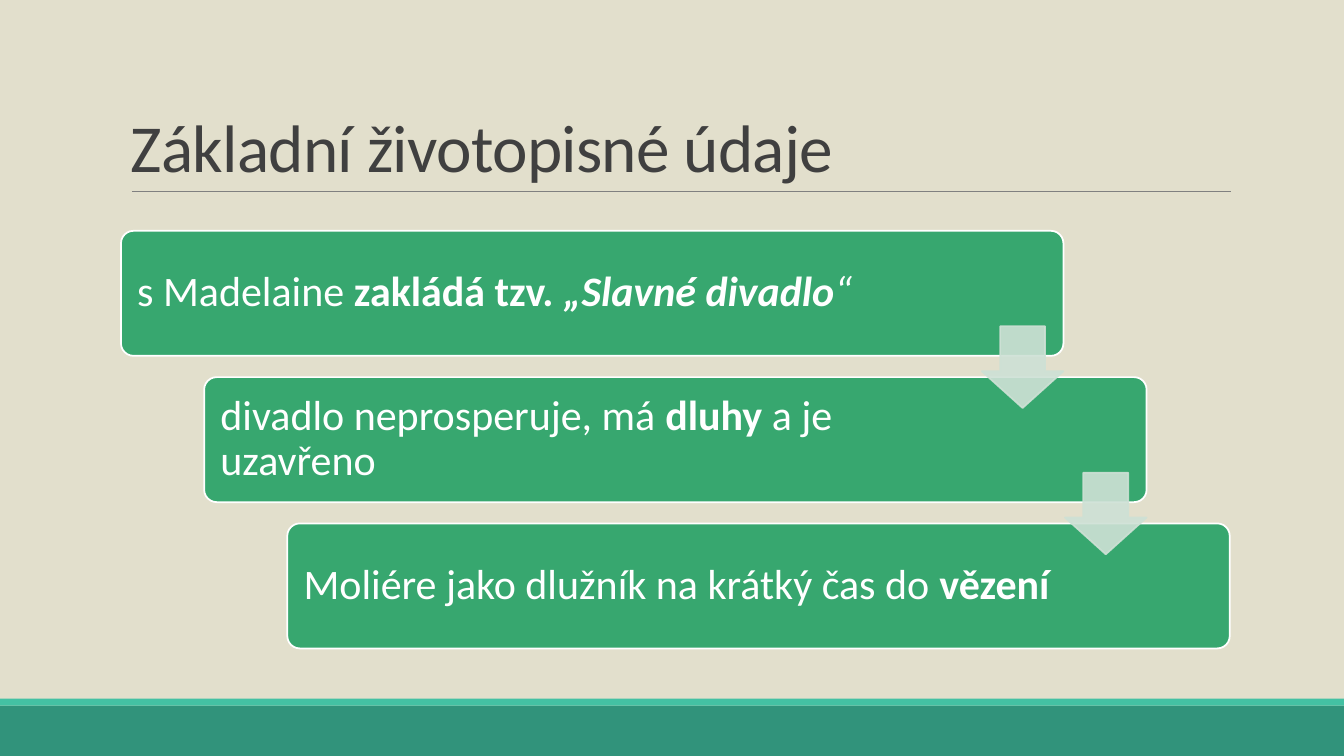
from dataclasses import dataclass

from lxml import etree
from pptx import Presentation
from pptx.dml.color import RGBColor
from pptx.enum.shapes import MSO_CONNECTOR, MSO_SHAPE
from pptx.enum.text import MSO_ANCHOR, PP_ALIGN
from pptx.oxml.ns import qn
from pptx.util import Pt

RECT = MSO_SHAPE.RECTANGLE
ROUND = MSO_SHAPE.ROUNDED_RECTANGLE
DOWN = MSO_SHAPE.DOWN_ARROW
LINE = MSO_CONNECTOR.STRAIGHT
LEFT = PP_ALIGN.LEFT
MIDDLE, BOTTOM = MSO_ANCHOR.MIDDLE, MSO_ANCHOR.BOTTOM


@dataclass(frozen=True)
class Theme:
    font: str = "Calibri"
    back: str = "E2DFCC"
    band: str = "31937B"
    strip: str = "44C1A3"
    rule: str = "808080"
    title: str = "404040"
    card: str = "37A76F"
    arrow: str = "CEE1D5"
    white: str = "FFFFFF"
    head: int = 48
    body: int = 30
    edge: float = 1.25


THEME = Theme()
WIDE, HIGH = 960, 540

# Each step is a list of (text, bold, italic)
STEPS = [
    [("s Madelaine ", False, False), ("zakládá tzv. ", True, False),
     ("„Slavné divadlo", True, True), ("“", False, True)],
    [("divadlo neprosperuje, má ", False, False), ("dluhy", True, False),
     (" a je uzavřeno", False, False)],
    [("Moliére jako dlužník na krátký čas do ", False, False),
     ("vězení", True, False)],
]

# Staircase of cards, in points
CARD_X, CARD_Y = 86.4, 164.9
CARD_W, CARD_H = 673.2, 89.3
STEP_X, STEP_Y = 59.4, 104.5
ARROW, DROP = 58.3, 68.2


def rgb(code):
    return RGBColor.from_string(code)


def shape(slide, kind, x, y, w, h, fill, line=None):
    item = slide.shapes.add_shape(kind, Pt(x), Pt(y), Pt(w), Pt(h))
    item.shadow.inherit = False
    item.fill.solid()
    item.fill.fore_color.rgb = rgb(fill)
    if line:
        item.line.color.rgb = rgb(line)
        item.line.width = Pt(THEME.edge)
    else:
        item.line.fill.background()
    return item


def style(run, size, color, bold=False, italic=False):
    font = run.font
    font.name, font.size = THEME.font, Pt(size)
    font.color.rgb = rgb(color)
    font.bold, font.italic = bold, italic


def title(slide, text):
    box = slide.shapes.add_textbox(Pt(86.4), Pt(22.3), Pt(792), Pt(114.5))
    frame = box.text_frame
    frame.word_wrap = True
    frame.vertical_anchor = BOTTOM
    frame.text = text
    para = frame.paragraphs[0]
    para.line_spacing = 0.85
    run = para.runs[0]
    style(run, THEME.head, THEME.title)
    run.font._element.set("spc", "-50")


def rule(slide, x1, x2, y):
    line = slide.shapes.add_connector(LINE, Pt(x1), Pt(y), Pt(x2), Pt(y))
    line.line.color.rgb = rgb(THEME.rule)
    line.line.width = Pt(0.5)
    etree.SubElement(line._element.spPr, qn("a:effectLst"))


def card(slide, x, y, parts):
    item = shape(slide, ROUND, x, y, CARD_W, CARD_H, THEME.card, THEME.white)
    item.adjustments[0] = 0.1
    frame = item.text_frame
    frame.word_wrap = True
    frame.vertical_anchor = MIDDLE
    frame.margin_left = frame.margin_top = frame.margin_bottom = Pt(9)
    frame.margin_right = Pt(126)
    para = frame.paragraphs[0]
    para.alignment = LEFT
    para.line_spacing = 0.9
    for text, bold, italic in parts:
        run = para.add_run()
        run.text = text
        style(run, THEME.body, THEME.white, bold, italic)


def arrow(slide, x, y):
    item = shape(slide, DOWN, x, y, ARROW, ARROW, THEME.arrow, THEME.arrow)
    item.adjustments[0] = 0.45
    item.adjustments[1] = 0.55
    item.adjustments[0], item.adjustments[1] = 0.55, 0.45
    # Fill and outline are both 90 % opaque
    for color in item._element.spPr.iter(qn("a:srgbClr")):
        etree.SubElement(color, qn("a:alpha")).set("val", "90000")


def main():
    deck = Presentation()
    deck.slide_width, deck.slide_height = Pt(WIDE), Pt(HIGH)
    slide = deck.slides.add_slide(deck.slide_layouts[6])

    # Background and footer bands
    slide.background.fill.solid()
    slide.background.fill.fore_color.rgb = rgb(THEME.back)
    shape(slide, RECT, 0, 504, WIDE, 36, THEME.band)
    shape(slide, RECT, 0, 499, WIDE, 5, THEME.strip)

    # Heading
    rule(slide, 94.3, 879, 136.6)
    title(slide, "Základní životopisné údaje")

    # Cards, then the arrows that overlap them
    spots = [(CARD_X + i * STEP_X, CARD_Y + i * STEP_Y)
             for i in range(len(STEPS))]
    for (x, y), parts in zip(spots, STEPS):
        card(slide, x, y, parts)
    for x, y in spots[:-1]:
        arrow(slide, x + CARD_W - ARROW, y + DROP)

    deck.save("out.pptx")


if __name__ == "__main__":
    main()
